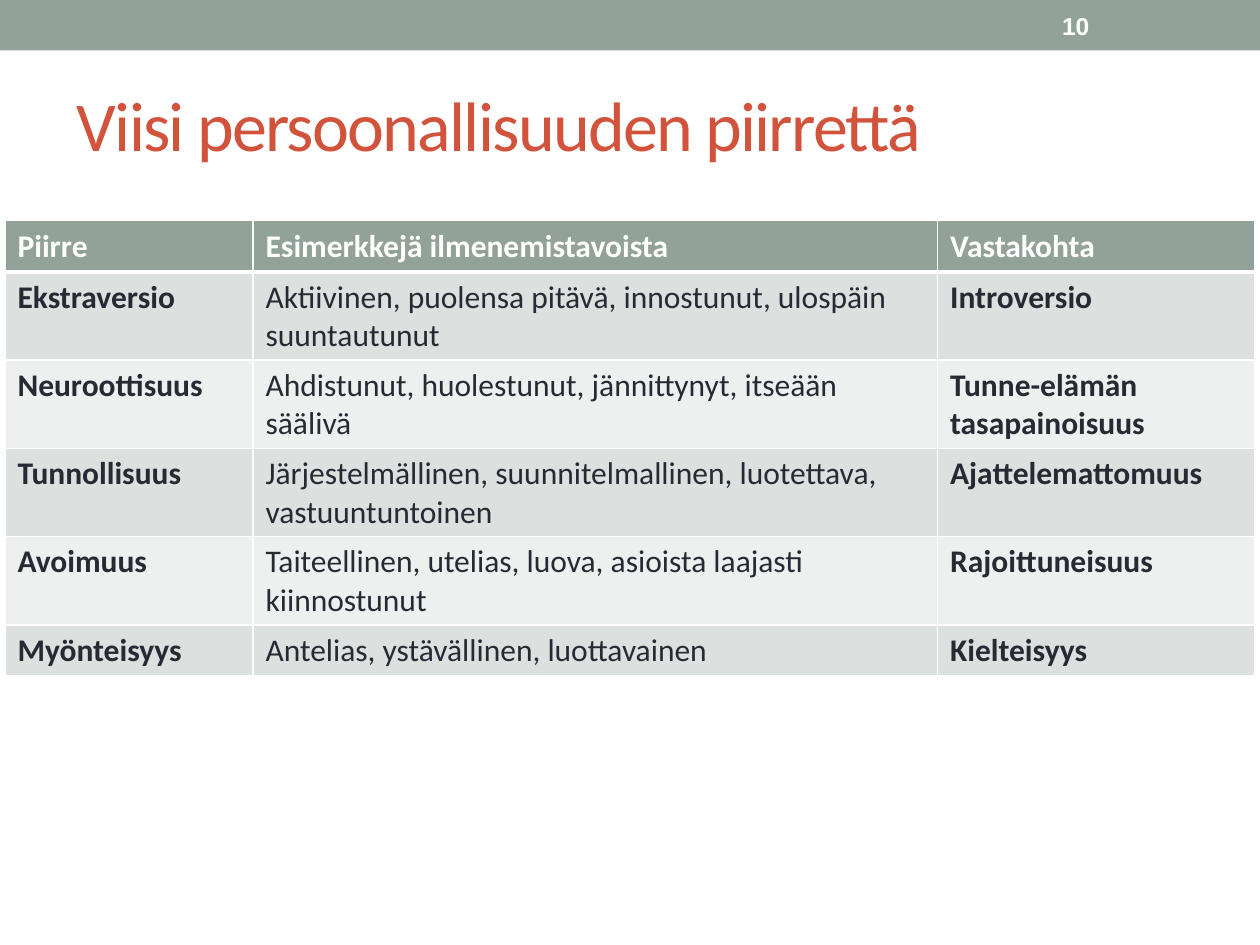
from pptx import Presentation
from pptx.dml.color import RGBColor
from pptx.enum.shapes import MSO_SHAPE as Shape
from pptx.enum.text import MSO_ANCHOR as Anchor
from pptx.oxml import parse_xml
from pptx.oxml.ns import nsdecls
from pptx.util import Cm, Pt

SAGE, RUST, INK, WHITE = "93A299", "D2533C", "292934", "FFFFFF"
BANDS = "DCE0DE", "EEF0EF"
TRAITS = [
    ("Piirre", "Esimerkkejä ilmenemistavoista", "Vastakohta"),
    ("Ekstraversio",
     "Aktiivinen, puolensa pitävä, innostunut, ulospäin suuntautunut",
     "Introversio"),
    ("Neuroottisuus",
     "Ahdistunut, huolestunut, jännittynyt, itseään säälivä",
     "Tunne-elämän tasapainoisuus"),
    ("Tunnollisuus",
     "Järjestelmällinen, suunnitelmallinen, luotettava, vastuuntuntoinen",
     "Ajattelemattomuus"),
    ("Avoimuus",
     "Taiteellinen, utelias, luova, asioista laajasti kiinnostunut",
     "Rajoittuneisuus"),
    ("Myönteisyys", "Antelias, ystävällinen, luottavainen", "Kielteisyys"),
]


def paint(fill, color):
    """Give a fill one solid colour."""
    fill.solid()
    fill.fore_color.rgb = RGBColor.from_string(color)


def write(frame, text, size=18, color=INK, font="Calibri", bold=False, space=0):
    """Put one formatted run of text into a text frame."""
    frame.word_wrap = True
    run = frame.paragraphs[0].add_run()
    run.text = text
    face = run.font
    face.size, face.name, face.bold = Pt(size), font, bold
    paint(face.fill, color)
    if space:
        run._r.get_or_add_rPr().set("spc", str(space * 100))


def label(slide, box, text, **style):
    """Add a vertically centred text box."""
    frame = slide.shapes.add_textbox(*map(Cm, box)).text_frame
    frame.vertical_anchor = Anchor.MIDDLE
    write(frame, text, **style)


def edge(cell, **widths):
    """Draw white borders of the given widths round a cell."""
    props = cell._tc.get_or_add_tcPr()
    for at, (side, width) in enumerate(widths.items()):
        props.insert(at, parse_xml(
            f'<a:ln{side} {nsdecls("a")} w="{Pt(width)}"><a:solidFill>'
            f'<a:srgbClr val="{WHITE}"/></a:solidFill></a:ln{side}>'))


def header(slide, box):
    """Add the top band with its page number."""
    left, top, width, height = box
    band = slide.shapes.add_shape(Shape.RECTANGLE, *map(Cm, box))
    band.shadow.inherit = False
    paint(band.fill, SAGE)
    band.line.fill.background()
    spot = left + width - 4.24, top + 0.05, 2.97, height - 0.1
    label(slide, spot, "10", size=14, color=WHITE, font="Arial", bold=True)


def grid(slide, box, rows, widths):
    """Add the banded table of traits."""
    table = slide.shapes.add_table(len(rows), len(widths), *map(Cm, box)).table
    for col, width in zip(table.columns, widths):
        col.width = Cm(width)
    for i, row in enumerate(rows):
        head = i == 0
        for j, text in enumerate(row):
            cell = table.cell(i, j)
            paint(cell.fill, SAGE if head else BANDS[(i - 1) % 2])
            edge(cell, L=1, R=1, T=3 if i == 1 else 1, B=3 if head else 1)
            write(cell.text_frame, text, color=WHITE if head else INK,
                  bold=head or j != 1)


def main():
    """Build and save the slide."""
    deck = Presentation()
    deck.slide_width, deck.slide_height = Cm(25.4), Cm(19.05)
    slide = deck.slides.add_slide(deck.slide_layouts[6])
    header(slide, (0, 0, 25.4, 1.02))
    label(slide, (1.3, 1.12, 22.86, 2.74), "Viisi persoonallisuuden piirrettä",
          size=40, color=RUST, space=-1)
    grid(slide, (0.1, 4.45, 25.2, 6.18), TRAITS, (5, 13.8, 6.4))
    deck.save("out.pptx")


if __name__ == "__main__":
    main()
